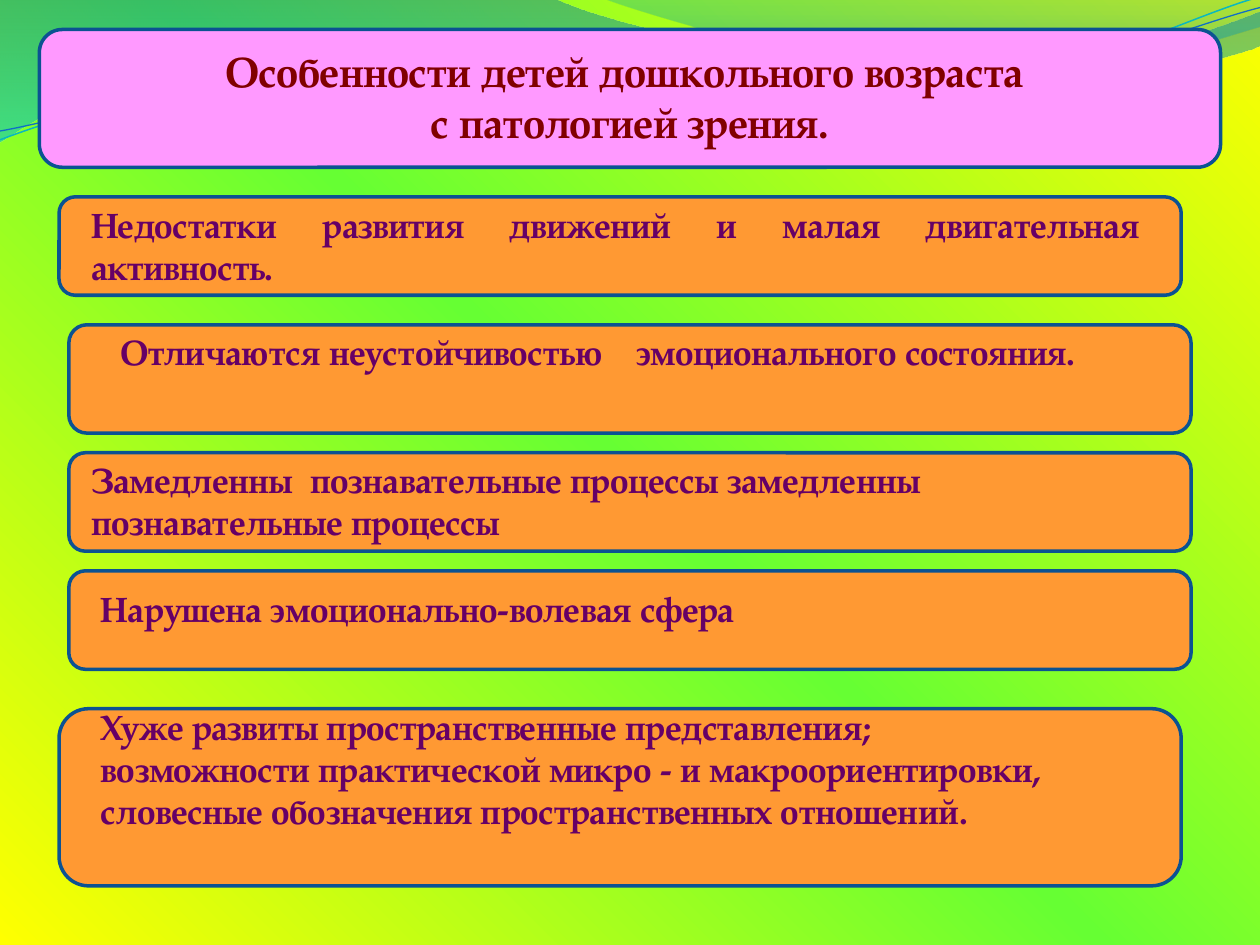
from pptx import Presentation
from pptx.dml.color import RGBColor
from pptx.enum.shapes import MSO_SHAPE as Shape
from pptx.enum.text import PP_ALIGN as Align
from pptx.oxml import parse_xml
from pptx.oxml.ns import nsdecls, qn
from pptx.util import Inches, Pt

WIDTH, HEIGHT = Inches(10), Inches(7.5)
CELL = WIDTH // 128
TENTH = WIDTH // 10
FONT = "TeX Gyre Pagella"
YELLOW, GREEN = RGBColor(0xFF, 0xFF, 0x00), RGBColor(0x66, 0xFF, 0x33)
PINK, ORANGE = RGBColor(0xFF, 0x99, 0xFF), RGBColor(0xFF, 0x99, 0x33)
NAVY, MAROON = RGBColor(0x0B, 0x52, 0x92), RGBColor(0x80, 0x00, 0x00)
PURPLE = RGBColor(0x66, 0x00, 0x66)
DEEP_TEAL, CYAN = RGBColor(0x00, 0x74, 0xA1), RGBColor(0x00, 0xC6, 0xCF)
TEAL, AZURE = RGBColor(0x00, 0xA1, 0xA9), RGBColor(0x00, 0x8B, 0xBF)
AQUA, BLUE = RGBColor(0x0A, 0xB8, 0xBF), RGBColor(0x0F, 0x6F, 0xC6)
DOWNWARD = '<a:lin ang="5400000" scaled="0"/>'
FROM_TOP_RIGHT = '<a:path path="circle"><a:fillToRect l="100000" b="100000"/></a:path>'

BANDS = [
    ([[(0, 0)], [(4.4, -0.01)],
      [(4.76, 0.17), (6.64, 0.63), (7.58, 0.63)],
      [(8.53, 0.63), (9.58, 0.26), (10, 0.09)], [(10.01, 0.36)],
      [(9.83, 0.44), (8.7, 0.76), (7.46, 0.75)],
      [(6.22, 0.75), (3.82, 0.28), (2.57, 0.34)],
      [(1.29, 0.36), (0.46, 0.83), (-0.01, 1.13)]],
     [(0, DEEP_TEAL, 45), (100, CYAN, 55)]),
    ([[(4.79, -0.01)],
      [(5.09, 0.11), (6.82, 0.62), (7.69, 0.65)],
      [(8.56, 0.69), (9.61, 0.32), (10, 0.21)], [(10, 0)]],
     [(0, TEAL, 30), (80, AZURE, 45)]),
]
STRANDS = [
    ([[(0, 1.11)], [(0.48, 0.93), (1.58, 0.57), (2.77, 0.52)],
      [(3.95, 0.47), (5.93, 0.89), (7.13, 0.8)],
      [(8.33, 0.71), (9.38, 0.15), (9.98, -0.02)]], AQUA, 0.85),
    ([[(0, 1.04)], [(0.47, 0.96), (1.64, 0.61), (2.83, 0.56)],
      [(4.03, 0.51), (5.97, 0.84), (7.17, 0.75)],
      [(8.36, 0.67), (9.41, 0.21), (10, 0.06)]], BLUE, 0.75),
]
TITLE = ["Особенности детей дошкольного возраста ", "с патологией зрения."]
FEATURES = [
    ((6, 20, 114, 10), (8, 20, 109, 10), Align.JUSTIFY,
     ["Недостатки развития движений и малая двигательная активность."]),
    ((7, 33, 114, 11), (11, 33, 107, 10), Align.JUSTIFY,
     ["Отличаются неустойчивостью\tэмоционального состояния."]),
    ((7, 46, 114, 10), (8, 46, 109, 10), Align.LEFT,
     ["Замедленны  познавательные процессы замедленны  познавательные процессы"]),
    ((7, 58, 114, 10), (9, 59, 107, 6), Align.LEFT,
     ["Нарушена эмоционально-волевая сфера"]),
    ((6, 72, 114, 18), (9, 71, 106, 24), Align.LEFT,
     ["Хуже развиты пространственные представления;",
      "возможности практической микро - и макроориентировки, "
      "словесные обозначения пространственных отношений."]),
]


def gradient(stops, direction):
    """Return a gradient fill element from (position, colour, opacity) stops."""
    marks = "".join(
        f'<a:gs pos="{position * 1000}"><a:srgbClr val="{color}">'
        f'<a:alpha val="{opacity * 1000}"/></a:srgbClr></a:gs>'
        for position, color, opacity in stops)
    return parse_xml(f'<a:gradFill {nsdecls("a")} rotWithShape="1">'
                     f'<a:gsLst>{marks}</a:gsLst>{direction}</a:gradFill>')


def add_outline(page, segments, close):
    """Add an unfilled freeform whose three-point segments are cubic curves."""
    start, *others = [(round(x * TENTH), round(y * TENTH))
                      for segment in segments for x, y in segment]
    builder = page.shapes.build_freeform(*start)
    builder.add_line_segments(others, close=close)
    outline = builder.convert_to_shape()
    strokes = iter(outline.element.findall(".//" + qn("a:lnTo")))
    for segment in segments[1:]:
        sides = [next(strokes) for _ in segment]
        if len(sides) == 3:
            curve = parse_xml(f'<a:cubicBezTo {nsdecls("a")}/>')
            sides[0].addprevious(curve)
            for side in sides:
                curve.append(side[0])
                side.getparent().remove(side)
    outline.shadow.inherit = False
    outline.fill.background()
    return outline


def add_backdrop(page):
    """Paint the radial background and the waves along the top edge."""
    page.background.fill.solid()
    plain = page.element.find(".//" + qn("p:bgPr")).find(qn("a:solidFill"))
    stops = [(0, YELLOW, 100), (50, GREEN, 100), (100, YELLOW, 100)]
    plain.getparent().replace(plain, gradient(stops, FROM_TOP_RIGHT))
    for segments, stops in BANDS:
        band = add_outline(page, segments, True)
        band.line.fill.background()
        properties = band.element.spPr
        properties.replace(properties.find(qn("a:noFill")), gradient(stops, DOWNWARD))
    for segments, color, weight in STRANDS:
        strand = add_outline(page, segments, False)
        strand.line.color.rgb = color
        strand.line.width = Pt(weight)


def add_panel(page, area, color):
    """Add a rounded panel over a grid area."""
    panel = page.shapes.add_shape(Shape.ROUNDED_RECTANGLE, *(CELL * n for n in area))
    panel.shadow.inherit = False
    panel.fill.solid()
    panel.fill.fore_color.rgb = color
    panel.line.color.rgb = NAVY
    panel.line.width = Pt(2)


def add_text(page, area, lines, size, color, align):
    """Write bold paragraphs in a box over a grid area."""
    box = page.shapes.add_textbox(*(CELL * n for n in area))
    frame = box.text_frame
    frame.word_wrap = True
    for index, line in enumerate(lines):
        para = frame.add_paragraph() if index else frame.paragraphs[0]
        para.text = line
        para.alignment = align
        if "\t" in line:
            para._p.get_or_add_pPr().append(parse_xml(
                f'<a:tabLst {nsdecls("a")}><a:tab pos="{Inches(4.09)}" algn="l"/></a:tabLst>'))
        para.font.name = FONT
        para.font.size = Pt(size)
        para.font.bold = True
        para.font.color.rgb = color


def add_title(page, area):
    """Place the title panel and its two centred lines."""
    left, top, width, height = area
    add_panel(page, area, PINK)
    add_text(page, (left + 3, top + 1, width - 6, height + 1), TITLE, 24, MAROON, Align.CENTER)


def add_feature(page, area, text_area, align, lines):
    """Place one feature panel with its text."""
    add_panel(page, area, ORANGE)
    add_text(page, text_area, lines, 20, PURPLE, align)


def main():
    """Build the slide and save it."""
    deck = Presentation()
    deck.slide_width, deck.slide_height = WIDTH, HEIGHT
    page = deck.slides.add_slide(deck.slide_layouts[6])
    add_backdrop(page)
    add_title(page, (4, 3, 120, 14))
    for feature in FEATURES:
        add_feature(page, *feature)
    deck.save("out.pptx")


if __name__ == "__main__":
    main()
